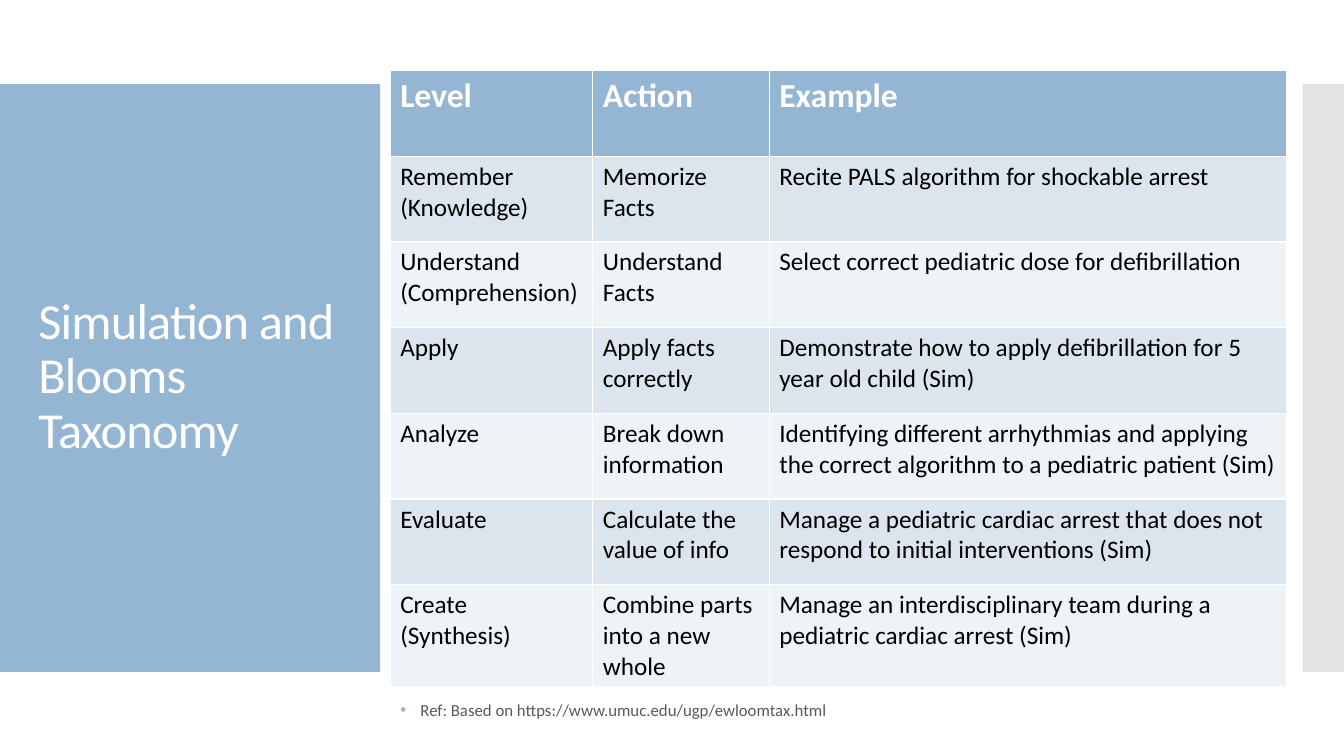
from lxml import etree
from pptx import Presentation
from pptx.dml.color import RGBColor
from pptx.enum.shapes import MSO_SHAPE
from pptx.enum.text import MSO_ANCHOR, MSO_AUTO_SIZE, PP_ALIGN
from pptx.oxml.ns import qn
from pptx.util import Inches, Pt

RECTANGLE = MSO_SHAPE.RECTANGLE
MIDDLE = MSO_ANCHOR.MIDDLE
NO_AUTOFIT = MSO_AUTO_SIZE.NONE
LEFT = PP_ALIGN.LEFT

WIDTH, HEIGHT = 13.33, 7.5
PANEL_TOP, PANEL_HEIGHT = HEIGHT / 9, HEIGHT * 7 / 9
PANEL_WIDTH, STRIP_LEFT = 3.77, 12.92
TABLE_LEFT, TABLE_TOP, ROW_HEIGHT = 3.87, 0.7, 0.85
COLUMN_WIDTHS = (2.01, 1.75, 5.13)

BLUE, GREY, WHITE = "94B6D2", "C8C8C8", "FFFFFF"
BAND_FILLS = ("EEF3F7", "DCE5EE")
TITLE_FONT = {"name": "Calibri", "size": Pt(36), "color": WHITE}
HEADER_FONT = {"name": "Calibri", "size": Pt(24), "bold": True, "color": WHITE}
CELL_FONT = {"name": "Calibri", "size": Pt(18), "bold": False, "color": "000000"}
REFERENCE_FONT = {"name": "Calibri", "size": Pt(12), "color": "595959"}

ROWS = (
    ("Level", "Action", "Example"),
    ("Remember (Knowledge)", "Memorize Facts",
     "Recite PALS algorithm for shockable arrest"),
    ("Understand (Comprehension)", "Understand Facts",
     "Select correct pediatric dose for defibrillation"),
    ("Apply", "Apply facts correctly",
     "Demonstrate how to apply defibrillation for 5 year old child (Sim)"),
    ("Analyze", "Break down information",
     "Identifying different arrhythmias and applying the correct algorithm "
     "to a pediatric patient (Sim)"),
    ("Evaluate", "Calculate the value of info",
     "Manage a pediatric cardiac arrest that does not respond to initial "
     "interventions (Sim)"),
    ("Create\n(Synthesis)", "Combine parts into a new whole",
     "Manage an interdisciplinary team during a pediatric cardiac arrest (Sim)"),
)


def set_fill(fill, color):
    fill.solid()
    fill.fore_color.rgb = RGBColor.from_string(color)


def format_font(font, values):
    for name, value in values.items():
        if name == "color":
            font.color.rgb = RGBColor.from_string(value)
        else:
            setattr(font, name, value)


def add_panel(slide, left, width, color):
    """Add a full-height colour panel behind the title."""
    panel = slide.shapes.add_shape(
        RECTANGLE, *map(Inches, (left, PANEL_TOP, width, PANEL_HEIGHT)))
    panel.shadow.inherit = False
    panel.line.fill.background()
    set_fill(panel.fill, color)
    slide.shapes.title._element.addprevious(panel._element)
    return panel


def set_opacity(shape, percent):
    color = shape._element.spPr.find(qn("a:solidFill"))[0]
    etree.SubElement(color, qn("a:alpha"), val=str(percent * 1000))


def fill_placeholder(placeholder, box, text):
    """Place and align a placeholder; return its only paragraph."""
    for name, value in zip(("left", "top", "width", "height"), box):
        setattr(placeholder, name, Inches(value))
    frame = placeholder.text_frame
    frame.text = text
    frame.word_wrap = True
    frame.auto_size = NO_AUTOFIT
    frame.vertical_anchor = MIDDLE
    paragraph = frame.paragraphs[0]
    paragraph.alignment = LEFT
    paragraph.line_spacing = 0.9
    paragraph.space_before = Pt(0)
    return paragraph


def add_bullet(paragraph, color, indent):
    properties = paragraph._p.get_or_add_pPr()
    properties.set("marL", str(Inches(indent)))
    properties.set("indent", str(-Inches(indent)))
    bullet_color = etree.SubElement(properties, qn("a:buClr"))
    etree.SubElement(bullet_color, qn("a:srgbClr"), val=color)
    etree.SubElement(properties, qn("a:buFont"), typeface="Arial")
    etree.SubElement(properties, qn("a:buChar"), char="•")


def add_taxonomy_table(slide):
    table = slide.shapes.add_table(
        len(ROWS), len(COLUMN_WIDTHS), Inches(TABLE_LEFT), Inches(TABLE_TOP),
        Inches(sum(COLUMN_WIDTHS)), Inches(ROW_HEIGHT * len(ROWS))).table
    for column, width in zip(table.columns, COLUMN_WIDTHS):
        column.width = Inches(width)
    for row_index, texts in enumerate(ROWS):
        is_header = row_index == 0
        for column_index, text in enumerate(texts):
            cell = table.cell(row_index, column_index)
            cell.text = text
            set_fill(cell.fill, BLUE if is_header else BAND_FILLS[row_index % 2])
            for paragraph in cell.text_frame.paragraphs:
                format_font(paragraph.runs[0].font,
                            HEADER_FONT if is_header else CELL_FONT)


def main():
    presentation = Presentation()
    presentation.slide_width = Inches(WIDTH)
    presentation.slide_height = Inches(HEIGHT)
    slide = presentation.slides.add_slide(presentation.slide_layouts[1])

    add_panel(slide, 0, PANEL_WIDTH, BLUE)
    strip = add_panel(slide, STRIP_LEFT, WIDTH - STRIP_LEFT, GREY)
    set_opacity(strip, 50)

    title = fill_placeholder(slide.shapes.title, (0.28, 1.23, 3.22, 5.03),
                             "Simulation and Blooms Taxonomy")
    title_run = title.runs[0]
    format_font(title_run.font, TITLE_FONT)
    title_run._r.get_or_add_rPr().set("spc", "-60")

    reference = fill_placeholder(
        slide.placeholders[1], (TABLE_LEFT, 6.85, 8, 0.4),
        "Ref: Based on https://www.umuc.edu/ugp/ewloomtax.html")
    add_bullet(reference, BLUE, 0.2)
    format_font(reference.runs[0].font, REFERENCE_FONT)

    add_taxonomy_table(slide)
    presentation.save("out.pptx")


if __name__ == "__main__":
    main()
